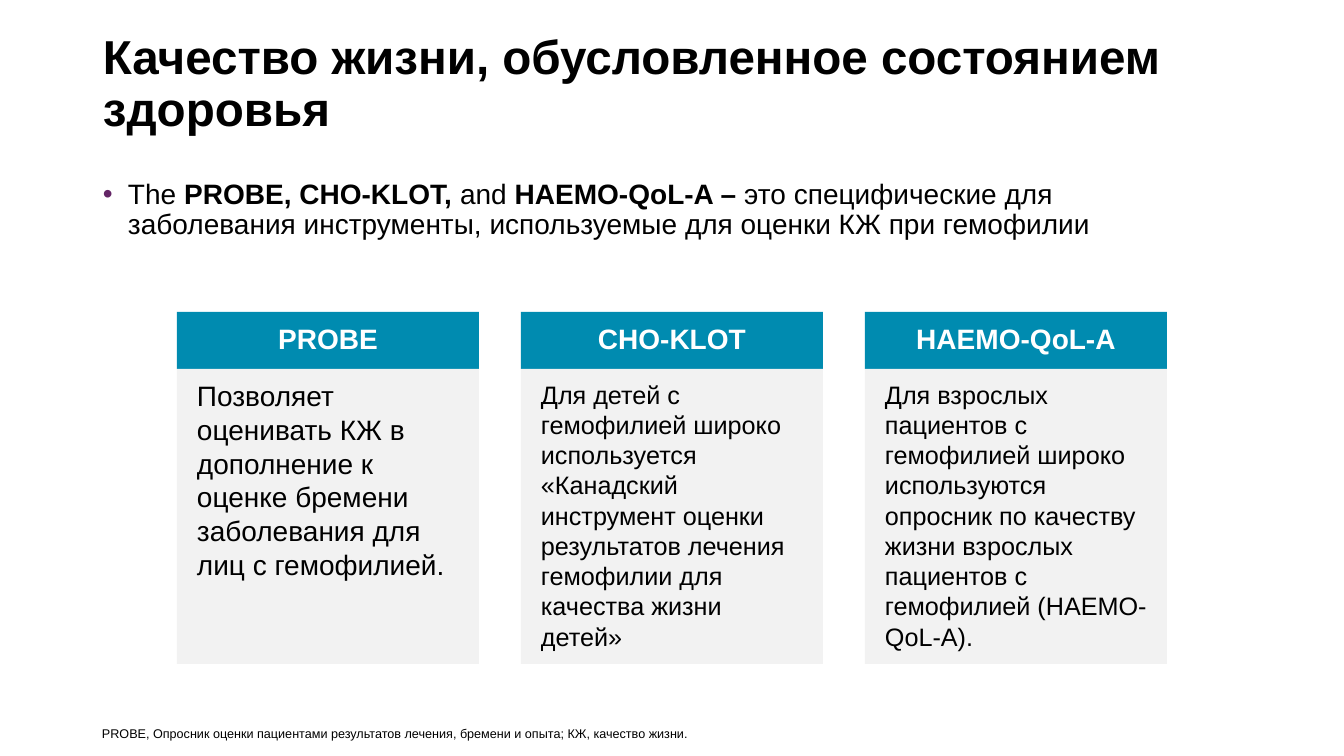
from lxml import etree
from pptx import Presentation
from pptx import util as u
from pptx.dml.color import RGBColor
from pptx.enum import shapes, text
from pptx.oxml.ns import qn

TITLE = "Качество жизни, обусловленное состоянием здоровья"
INTRO = [  # text, bold
    ("The ", False),
    ("PROBE, CHO-KLOT,", True),
    (" and ", False),
    ("HAEMO-QoL-A – ", True),
    ("это специфические для заболевания инструменты, используемые для оценки КЖ при гемофилии", False),
]
TOOLS = [  # name, description, description size in pt
    ("PROBE",
     "Позволяет оценивать КЖ в дополнение к оценке бремени заболевания для лиц с гемофилией.", 20),
    ("CHO-KLOT",
     "Для детей с гемофилией широко используется «Канадский инструмент оценки результатов "
     "лечения гемофилии для качества жизни детей»", 18),
    ("HAEMO-QoL-A",
     "Для взрослых пациентов с гемофилией широко используются опросник по качеству жизни "
     "взрослых пациентов с гемофилией (HAEMO-QoL-A).", 18),
]
FOOTNOTE = "PROBE, Опросник оценки пациентами результатов лечения, бремени и опыта; КЖ, качество жизни."

FONT = "Arial"
COLORS = {"text": "000000", "header": "008BB0", "header_text": "FFFFFF",
          "card": "F2F2F2", "bullet": "642566"}

# Lengths in px
SLIDE_W, SLIDE_H = 1344, 756
CARD_LEFT, CARD_TOP, CARD_W, CARD_GAP = 177, 312, 302, 42
HEADER_H, DESCRIPTION_H = 57, 295
BOX_INSETS = (10, 5, 10, 5)
HEADER_INSETS = (19, 11, 19, 11)
DESCRIPTION_INSETS = (20, 10, 14, 16)
BULLET_INDENT = 25


def px(n):
    return round(n * 914400 / 100.8)


def rgb(name):
    return RGBColor.from_string(COLORS[name])


def write(shape, runs, size, color="text", insets=BOX_INSETS, spacing=1.0,
          anchor=text.MSO_ANCHOR.TOP, align=text.PP_ALIGN.LEFT):
    """Fill a shape with one paragraph of (text, bold) runs and return the paragraph."""
    frame = shape.text_frame
    frame.word_wrap = True
    frame.vertical_anchor = anchor
    frame.margin_left, frame.margin_top, frame.margin_right, frame.margin_bottom = map(px, insets)
    paragraph = frame.paragraphs[0]
    paragraph.alignment = align
    paragraph.line_spacing = spacing
    for words, bold in runs:
        run = paragraph.add_run()
        run.text = words
        run.font.name = FONT
        run.font.size = u.Pt(size)
        run.font.bold = bold
        run.font.color.rgb = rgb(color)
    return paragraph


def add_bullet(paragraph):
    props = paragraph._p.get_or_add_pPr()
    props.set("marL", str(px(BULLET_INDENT)))
    props.set("indent", str(-px(BULLET_INDENT)))
    color = etree.SubElement(props, qn("a:buClr"))
    etree.SubElement(color, qn("a:srgbClr"), val=COLORS["bullet"])
    etree.SubElement(props, qn("a:buFont"), typeface=FONT)
    etree.SubElement(props, qn("a:buChar"), char="•")


def add_box(slide, left, top, width, height):
    return slide.shapes.add_textbox(px(left), px(top), px(width), px(height))


def add_panel(slide, left, top, height, fill):
    panel = slide.shapes.add_shape(shapes.MSO_SHAPE.RECTANGLE,
                                   px(left), px(top), px(CARD_W), px(height))
    panel.shadow.inherit = False
    panel.fill.solid()
    panel.fill.fore_color.rgb = rgb(fill)
    panel.line.fill.background()
    return panel


def main():
    deck = Presentation()
    deck.slide_width, deck.slide_height = px(SLIDE_W), px(SLIDE_H)
    slide = deck.slides.add_slide(deck.slide_layouts[6])

    write(add_box(slide, 93, 25, 1159, 120), [(TITLE, True)], 34,
          spacing=0.9, anchor=text.MSO_ANCHOR.MIDDLE)
    add_bullet(write(add_box(slide, 93, 175, 1132, 101), INTRO, 20, spacing=0.9))

    for i, (name, description, size) in enumerate(TOOLS):
        left = CARD_LEFT + i * (CARD_W + CARD_GAP)
        write(add_panel(slide, left, CARD_TOP, HEADER_H, "header"), [(name, True)], 20,
              "header_text", HEADER_INSETS, 0.9, text.MSO_ANCHOR.MIDDLE, text.PP_ALIGN.CENTER)
        write(add_panel(slide, left, CARD_TOP + HEADER_H, DESCRIPTION_H, "card"),
              [(description, False)], size, insets=DESCRIPTION_INSETS)

    write(add_box(slide, 92, 721, 671, 25), [(FOOTNOTE, False)], 9)
    deck.save("out.pptx")


if __name__ == "__main__":
    main()
